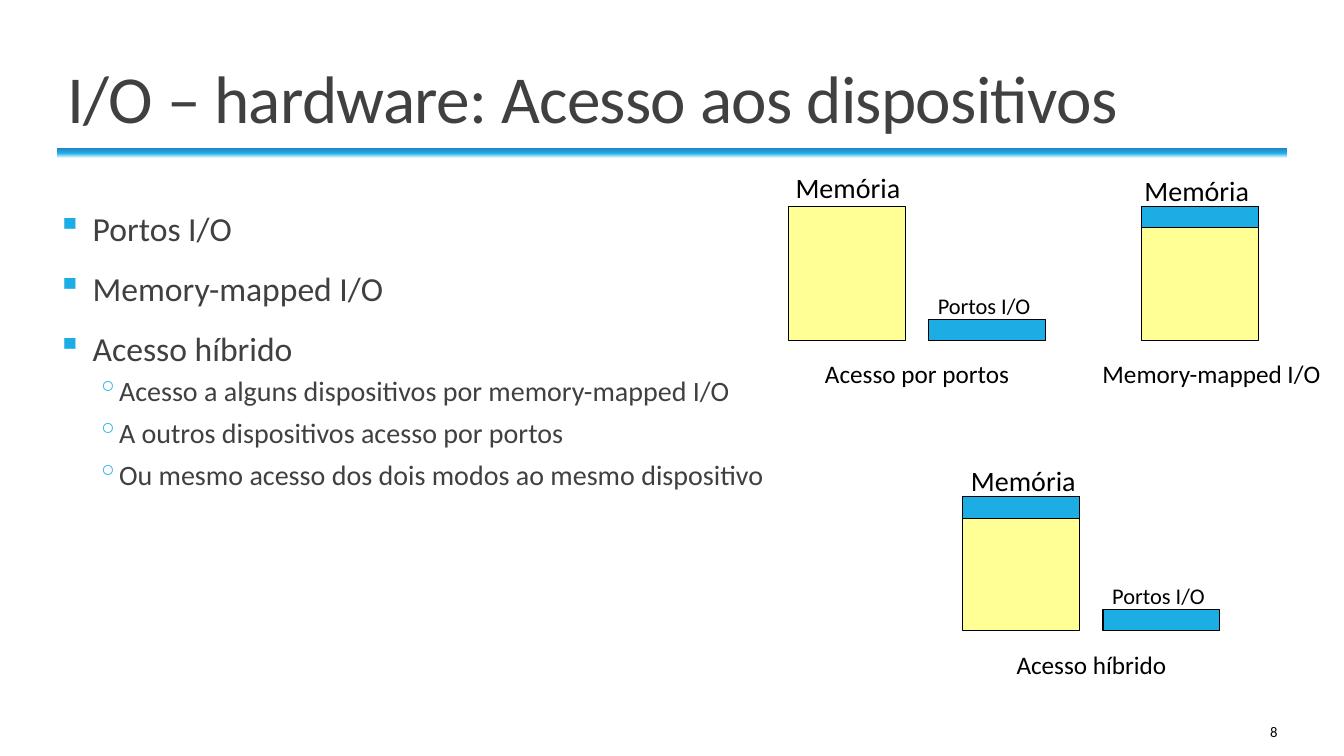
from copy import deepcopy

from pptx import Presentation
from pptx.dml.color import RGBColor
from pptx.enum.shapes import MSO_SHAPE
from pptx.enum.text import MSO_ANCHOR, PP_ALIGN
from pptx.oxml.ns import qn
from pptx.oxml.xmlchemy import OxmlElement
from pptx.util import Inches, Pt

RECT = MSO_SHAPE.RECTANGLE
CENTER, RIGHT, LEFT = PP_ALIGN.CENTER, PP_ALIGN.RIGHT, PP_ALIGN.LEFT
TOP, MIDDLE, BOTTOM = MSO_ANCHOR.TOP, MSO_ANCHOR.MIDDLE, MSO_ANCHOR.BOTTOM
COLORS = {name: RGBColor.from_string(code) for name, code in {
    "white": "FFFFFF", "black": "000000", "text": "404040",
    "blue": "1CADE4", "deep": "2683C6", "memory": "FFFF95"}.items()}


def add_text(shapes, box, lines, size, color="black", align=CENTER, anchor=TOP):
    frame = shapes.add_textbox(*map(Inches, box)).text_frame
    frame.word_wrap = True
    frame.vertical_anchor = anchor
    frame.text = lines
    for para in frame.paragraphs:
        para.alignment = align
        font = para.runs[0].font
        font.name, font.size = "Calibri", Pt(size)
        font.color.rgb = COLORS[color]
    return frame


def add_block(shapes, box, color):
    block = shapes.add_shape(RECT, *map(Inches, box))
    block.shadow.inherit = False
    block.fill.solid()
    block.fill.fore_color.rgb = COLORS[color]
    block.line.color.rgb = COLORS["black"]
    block.line.width = Pt(0.75)


prs = Presentation()
prs.slide_width, prs.slide_height = Inches(13.33), Inches(7.5)
slide = prs.slides.add_slide(prs.slide_layouts[6])
shapes = slide.shapes

# Rule under the title
rule = shapes.add_shape(RECT, *map(Inches, (0.57, 1.47, 12.2, 0.1)))
rule.shadow.inherit = False
rule.line.fill.background()
rule.fill.gradient()
rule.fill.gradient_angle = 90
stops = rule._element.spPr.find(".//" + qn("a:gsLst"))
stops.append(deepcopy(stops[0]))
for stop, pos, name in zip(rule.fill.gradient_stops, (0, 0.5, 1),
                           ("white", "blue", "deep")):
    stop.position = pos
    stop.color.rgb = COLORS[name]

# Slide number and title
add_text(shapes, (10.83, 7.06, 1.94, 0.4), "8", 10.5, align=RIGHT, anchor=MIDDLE)
title = add_text(shapes, (0.57, 0.29, 12.2, 1.12),
                 "I/O – hardware: Acesso aos dispositivos", 48, "text", LEFT, BOTTOM)
title.paragraphs[0].line_spacing = 0.85
title.paragraphs[0].runs[0].font._element.set("spc", "-50")

# Bullets: level, text
items = [
    (0, "Portos I/O"),
    (0, "Memory-mapped I/O"),
    (0, "Acesso híbrido"),
    (1, "Acesso a alguns dispositivos por memory-mapped I/O"),
    (1, "A outros dispositivos acesso por portos"),
    (1, "Ou mesmo acesso dos dois modos ao mesmo dispositivo"),
]
# Per level: size, left margin, hanging indent, space before, space after, mark
levels = [(24, 0.35, 0.35, 12, 2, "▪"), (20, 0.59, 0.2, 2, 4, "◦")]
body = add_text(shapes, (0.57, 2.01, 12.2, 4.82),
                "\n".join(text for _, text in items), 24, "text", LEFT)
body.margin_left = body.margin_right = 0
for para, (level, _) in zip(body.paragraphs, items):
    size, left, hang, before, after, mark = levels[level]
    para.level = level
    para.runs[0].font.size = Pt(size)
    para.space_before, para.space_after = Pt(before), Pt(after)
    props = para._p.get_or_add_pPr()
    props.set("marL", str(Inches(left)))
    props.set("indent", str(-Inches(hang)))
    tint = OxmlElement("a:buClr")
    shade = OxmlElement("a:srgbClr")
    shade.set("val", str(COLORS["blue"]))
    tint.append(shade)
    bullet = OxmlElement("a:buChar")
    bullet.set("char", mark)
    props.extend([tint, bullet])

# Memory diagrams: memory corner, mapped strip, ports, label offset, caption offset
WIDTH, HEIGHT, STRIP = 1.16, 1.33, 0.21
diagrams = [
    (7.82, 2.05, False, True, (-0.2, -0.41), 0, "Acesso por portos"),
    (11.32, 2.05, True, False, (-0.24, -0.38), -0.58, "Memory-mapped I/O"),
    (9.55, 4.93, True, True, (-0.19, -0.38), 0, "Acesso híbrido"),
]
for x, y, mapped, ports, (dx, dy), shift, caption in diagrams:
    group = shapes.add_group_shape().shapes
    add_block(group, (x, y, WIDTH, HEIGHT), "memory")
    if mapped:
        add_block(group, (x, y, WIDTH, STRIP), "blue")
    add_text(group, (x + dx, y + dy, 1.58, 0.44), "Memória", 20)
    if ports:
        add_block(group, (x + 1.39, y + HEIGHT - STRIP, WIDTH, STRIP), "blue")
        add_text(group, (x + 1.15, y + 0.8, 1.58, 0.37), "Portos I/O", 16)
    add_text(group, (x + shift, y + 1.46, 2.55, 0.4), caption, 18)

prs.save("out.pptx")
